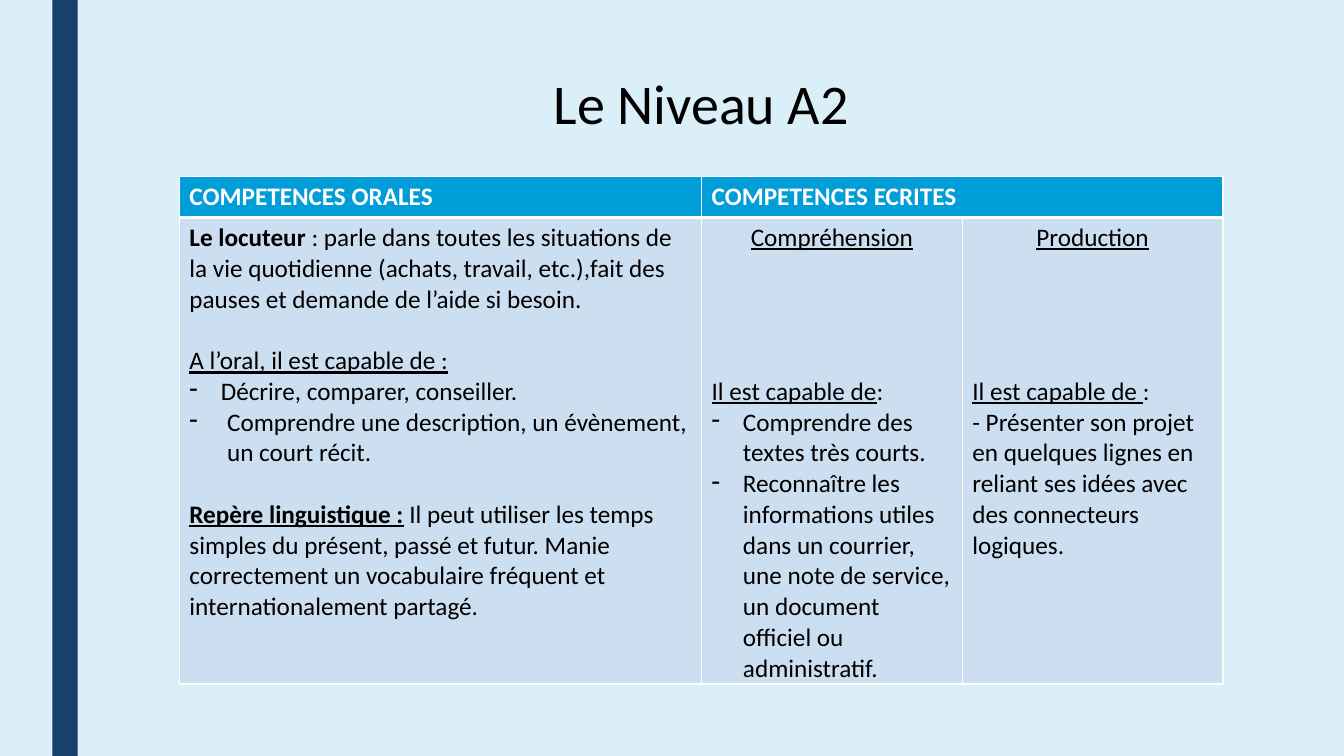
from dataclasses import dataclass
from typing import Optional

from lxml.etree import SubElement
from pptx import Presentation
from pptx.dml.color import RGBColor
from pptx.enum.shapes import MSO_SHAPE
from pptx.enum.text import MSO_ANCHOR, MSO_AUTO_SIZE, PP_ALIGN
from pptx.oxml import parse_xml
from pptx.oxml.ns import nsdecls, qn
from pptx.util import Cm, Pt

COLORS = {
    "background": "DBEFF9",
    "band": "17406D",
    "header": "009DD9",
    "body": "CCDFF1",
    "white": "FFFFFF",
    "black": "000000",
}
FONT = "Calibri"
LINE = 22  # height of one 18 pt line, in points


@dataclass
class Run:
    text: str
    bold: bool = False
    underline: bool = False


@dataclass
class Para:
    runs: list[Run]
    gap_lines: int = 0
    hanging: Optional[float] = None  # dash indent in cm
    align: PP_ALIGN = PP_ALIGN.LEFT


@dataclass
class CellText:
    row: int
    col: int
    paras: list[Para]


def rgb(name: str) -> RGBColor:
    return RGBColor.from_string(COLORS[name])


def format_font(font, color: str, **values) -> None:
    for key, value in {"name": FONT, **values}.items():
        setattr(font, key, value)
    font.color.rgb = rgb(color)


def add_dash(p, hanging: float) -> None:
    pPr = p._p.get_or_add_pPr()
    pPr.set("marL", str(Cm(hanging)))
    pPr.set("indent", str(-Cm(hanging)))
    SubElement(pPr, qn("a:buChar")).set("char", "-")


def write_paras(tf, paras: list[Para], color: str) -> None:
    for i, para in enumerate(paras):
        p = tf.paragraphs[0] if i == 0 else tf.add_paragraph()
        p.alignment = para.align
        p.space_before = Pt(para.gap_lines * LINE)
        if para.hanging:
            add_dash(p, para.hanging)
        for run in para.runs:
            r = p.add_run()
            r.text = run.text
            format_font(r.font, color, size=Pt(18), bold=run.bold,
                        underline=run.underline)


def set_borders(cell, bottom: float) -> None:
    tcPr = cell._tc.get_or_add_tcPr()
    widths = {"lnL": 1, "lnR": 1, "lnT": 1, "lnB": bottom}
    for i, (side, width) in enumerate(widths.items()):
        tcPr.insert(i, parse_xml(
            f'<a:{side} {nsdecls("a")} w="{Pt(width)}"><a:solidFill>'
            f'<a:srgbClr val="{COLORS["white"]}"/></a:solidFill></a:{side}>'))


CELLS = [
    CellText(0, 0, [Para([Run("COMPETENCES ORALES", bold=True)])]),
    CellText(0, 1, [Para([Run("COMPETENCES ECRITES", bold=True)])]),
    CellText(1, 0, [
        Para([Run("Le locuteur ", bold=True),
              Run(": parle dans toutes les situations de la vie quotidienne "
                  "(achats, travail, etc.),fait des pauses et demande de "
                  "l’aide si besoin.")]),
        Para([Run("A l’oral, il est capable de :", underline=True)], gap_lines=1),
        Para([Run("Décrire, comparer, conseiller.")], hanging=0.79),
        Para([Run("Comprendre une description, un évènement, un court récit.")],
             hanging=0.95),
        Para([Run("Repère linguistique :", bold=True, underline=True),
              Run(" Il peut utiliser les temps simples du présent, passé et "
                  "futur. Manie correctement un vocabulaire fréquent et "
                  "internationalement partagé.")], gap_lines=1),
    ]),
    CellText(1, 1, [
        Para([Run("Compréhension", underline=True)], align=PP_ALIGN.CENTER),
        Para([Run("Il est capable de", underline=True), Run(":")], gap_lines=4),
        Para([Run("Comprendre des textes très courts.")], hanging=0.79),
        Para([Run("Reconnaître les informations utiles dans un courrier, une "
                  "note de service, un document officiel ou administratif.")],
             hanging=0.79),
    ]),
    CellText(1, 2, [
        Para([Run("Production", underline=True)], align=PP_ALIGN.CENTER),
        Para([Run("Il est capable de ", underline=True), Run(":")], gap_lines=4),
        Para([Run("- Présenter son projet en quelques lignes en reliant ses "
                  "idées avec des connecteurs logiques.")]),
    ]),
]


def add_band(s) -> None:
    sp = s.shapes.add_shape(MSO_SHAPE.RECTANGLE, Cm(1.32), 0, Cm(0.64), Cm(19.05))
    sp.shadow.inherit = False
    sp.fill.solid()
    sp.fill.fore_color.rgb = rgb("band")
    sp.line.fill.background()


def set_title(s, text: str) -> None:
    sp = s.shapes.title
    box = {"left": 3, "top": 1.6, "width": 29.34, "height": 5.21}
    for key, value in box.items():
        setattr(sp, key, Cm(value))
    tf = sp.text_frame
    tf.text = text
    tf.auto_size = MSO_AUTO_SIZE.NONE
    tf.vertical_anchor = MSO_ANCHOR.TOP
    p = tf.paragraphs[0]
    p.alignment = PP_ALIGN.CENTER
    format_font(p.runs[0].font, "black", size=Pt(40))


def add_levels_table(s) -> None:
    widths, heights = [13.16, 6.57, 6.57], [1.03, 11.67]
    table = s.shapes.add_table(len(heights), len(widths), Cm(4.52), Cm(4.45),
                               Cm(sum(widths)), Cm(sum(heights))).table
    for column, width in zip(table.columns, widths):
        column.width = Cm(width)
    for row, height in zip(table.rows, heights):
        row.height = Cm(height)
    table.cell(0, 1).merge(table.cell(0, 2))
    # Fills and borders
    for i, row in enumerate(table.rows):
        for cell in row.cells:
            cell.fill.solid()
            cell.fill.fore_color.rgb = rgb("body" if i else "header")
            set_borders(cell, bottom=1 if i else 3)
            if i:
                cell.margin_bottom = 0
    # Wording
    for item in CELLS:
        write_paras(table.cell(item.row, item.col).text_frame, item.paras,
                    "black" if item.row else "white")


def main() -> None:
    prs = Presentation()
    prs.slide_width, prs.slide_height = Cm(33.87), Cm(19.05)
    s = prs.slides.add_slide(prs.slide_layouts[5])
    s.background.fill.solid()
    s.background.fill.fore_color.rgb = rgb("background")
    add_band(s)
    set_title(s, "Le Niveau A2")
    add_levels_table(s)
    prs.save("out.pptx")


if __name__ == "__main__":
    main()
